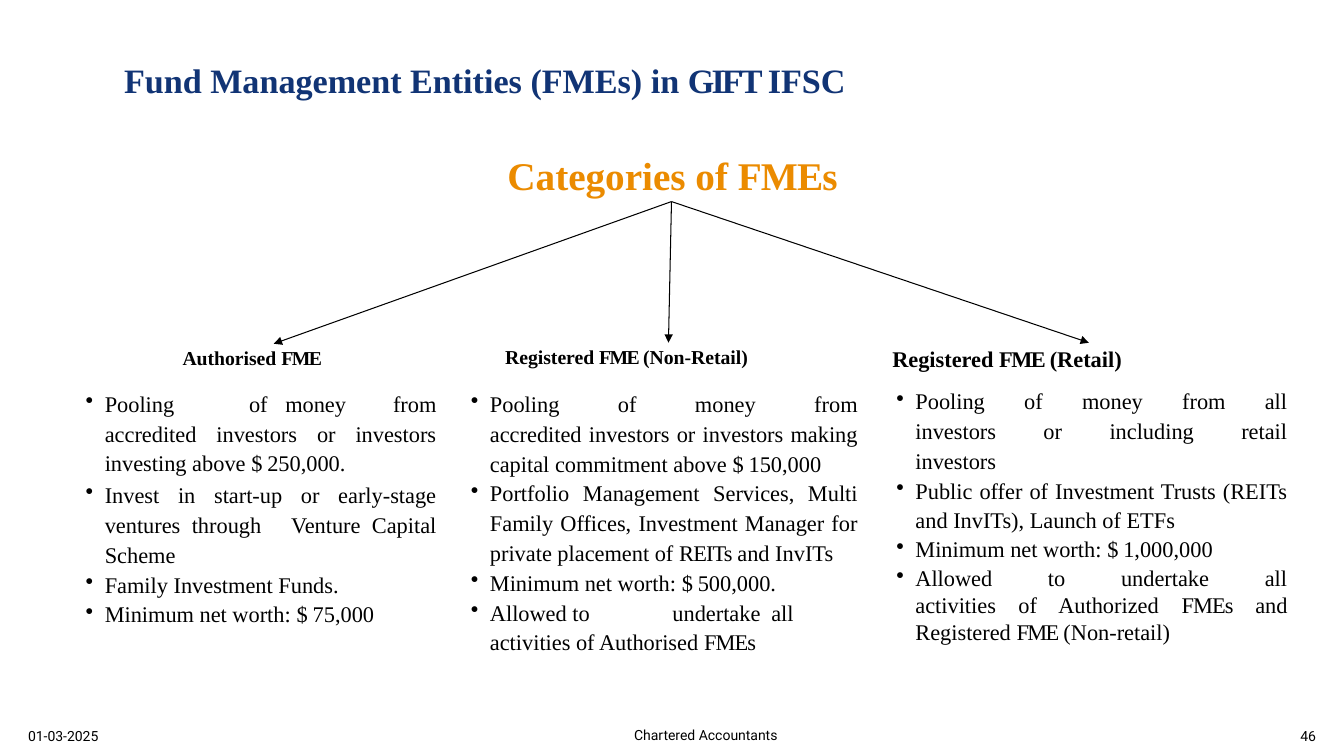
"""Build the slide on categories of Fund Management Entities."""
from copy import deepcopy
from itertools import groupby

from lxml import etree
from pptx import Presentation
from pptx.dml.color import RGBColor
from pptx.enum import shapes, text
from pptx.oxml import ns
from pptx.util import Inches, Pt

COLORS = {"navy": "113475", "orange": "EB8B00", "black": "000000"}
TIGHT = {"GIFT": -200, "FME": -110, "FMEs": -60, "REITs": -60, "$": -50}
ALIGN = {"l": text.PP_ALIGN.LEFT, "c": text.PP_ALIGN.CENTER,
         "r": text.PP_ALIGN.RIGHT, "j": text.PP_ALIGN.JUSTIFY}
SERIF = "Times New Roman"


def add_lines(shape, lines, inset=True):
    """Fill a text shape with (wording, format) paragraphs."""
    tf = shape.text_frame
    tf.word_wrap, tf.auto_size = True, text.MSO_AUTO_SIZE.NONE
    tf.vertical_anchor = text.MSO_ANCHOR.BOTTOM if inset else text.MSO_ANCHOR.TOP
    if not inset:
        tf.margin_left = tf.margin_right = tf.margin_bottom = 0
        tf.margin_top = Inches(0.02)
    for i, (wording, fmt) in enumerate(lines):
        p = tf.add_paragraph() if i else tf.paragraphs[0]
        p.alignment = ALIGN[fmt.get("align", "l")]
        p.line_spacing = fmt.get("spacing", 1.0)
        p.space_before = Pt(fmt.get("before", 0) if i else 0)
        pPr = p._p.get_or_add_pPr()
        pPr.set("marL", str(Inches(fmt.get("left", 0))))
        if fmt.get("bullet"):
            pPr.set("indent", str(Inches(-0.19)))
            etree.SubElement(pPr, ns.qn("a:buChar")).set("char", "•")
        if "tabs" in fmt:
            tabs = etree.SubElement(pPr, ns.qn("a:tabLst"))
            for pos in fmt["tabs"]:
                tab = etree.SubElement(tabs, ns.qn("a:tab"))
                tab.set("pos", str(Inches(pos)))
                tab.set("algn", "l")
        for n, line in enumerate(wording.split("\v")):
            if n:
                p.add_line_break()
                p._p[-1].append(deepcopy(r._r.rPr))
            groups = [(k, list(g)) for k, g in
                      groupby(line.split(" "), lambda word: TIGHT.get(word, 0))]
            for j, (spc, words) in enumerate(groups):
                r = p.add_run()
                r.text = " ".join(words) + (" " if j < len(groups) - 1 else "")
                r.font.name = fmt.get("font", SERIF)
                r.font.size = Pt(fmt.get("size", 16))
                r.font.bold = fmt.get("bold", False)
                r.font.color.rgb = RGBColor.from_string(COLORS[fmt.get("color", "black")])
                if spc:
                    r._r.get_or_add_rPr().set("spc", str(spc))


prs = Presentation()
prs.slide_width, prs.slide_height = Inches(13.33), Inches(7.5)
s = prs.slides.add_slide(prs.slide_layouts[5])

title = s.shapes.title
title.left, title.top, title.width, title.height = map(Inches, (1.15, 0.57, 11.02, 1.43))
add_lines(title, [
    ("Fund Management Entities (FMEs) in GIFT IFSC",
     {"size": 24.4, "bold": True, "color": "navy", "left": 0.08}),
    ("Categories of FMEs",
     {"size": 28, "bold": True, "color": "orange", "align": "c", "before": 36.3, "left": 0.02}),
], inset=False)

heading = {"size": 14.1, "bold": True, "left": 0.02}
bullet = {"bullet": True, "align": "j", "left": 0.21, "spacing": 1.11}
retail = {**bullet, "left": 0.25}
tabbed = {**bullet, "tabs": (0.85, 1.64)}
left_tabbed = {**bullet, "align": "l", "tabs": (0.78, 1.13, 2.02)}

boxes = [
    ((1.79, 3.41, 1.85, 0.29), [("Authorised FME", heading)]),
    ((4.99, 3.4, 3.28, 0.29), [("Registered FME (Non-Retail)", heading)]),
    ((8.83, 3.4, 3.94, 3.04), [
        ("Registered FME (Retail)", {**heading, "size": 16}),
        ("Pooling of money from all\vinvestors or including retail\vinvestors",
         {**retail, "before": 9.2}),
        ("Public offer of Investment Trusts (REITs and InvITs), Launch of ETFs", retail),
        ("Minimum net worth: $ 1,000,000", {**retail, "spacing": 1.0, "before": 1.5}),
        ("Allowed to undertake all\vactivities of Authorized FMEs and Registered FME (Non-retail)",
         {**retail, "spacing": 1.0, "before": 1.5}),
    ]),
    ((0.83, 3.82, 3.5, 2.4), [
        ("Pooling\tof\tmoney from accredited investors or investors "
         "investing above $ 250,000.", tabbed),
        ("Invest in start-up or early-stage ventures through\tVenture Capital Scheme",
         {**tabbed, "before": 1.3}),
        ("Family Investment Funds.", bullet),
        ("Minimum net worth: $ 75,000", bullet),
    ]),
    ((4.65, 3.82, 3.86, 2.69), [
        ("Pooling of money from\vaccredited investors or investors making "
         "capital commitment above $ 150,000", bullet),
        ("Portfolio Management Services, Multi Family Offices, Investment Manager "
         "for private placement of REITs and InvITs", bullet),
        ("Minimum net worth: $ 500,000.", left_tabbed),
        ("Allowed to\tundertake\tall activities of Authorised FMEs", left_tabbed),
    ]),
]
placed = []
for place, lines in boxes:
    box = s.shapes.add_textbox(*map(Inches, place))
    add_lines(box, lines, inset=False)
    placed.append(box)

for category in placed[:3]:
    arrow = s.shapes.add_connector(shapes.MSO_CONNECTOR.STRAIGHT, 0, 0, 0, 0)
    arrow.begin_connect(title, 2)
    arrow.end_connect(category, 0)
    arrow.line.width = Pt(0.75)
    arrow.line.color.rgb = RGBColor.from_string(COLORS["black"])
    etree.SubElement(arrow.line._get_or_add_ln(), ns.qn("a:tailEnd")).set("type", "triangle")
    etree.SubElement(arrow._element.spPr, ns.qn("a:effectLst"))

for place, wording, align in [
    ((0.18, 6.93, 0.97, 0.5), "01-03-2025", "l"),
    ((4.89, 6.92, 4.22, 0.5), "Chartered Accountants", "c"),
    ((12.67, 6.93, 0.48, 0.5), "46", "r"),
]:
    add_lines(s.shapes.add_textbox(*map(Inches, place)),
              [(wording, {"size": 10, "font": "Roboto", "align": align})])

prs.save("out.pptx")
